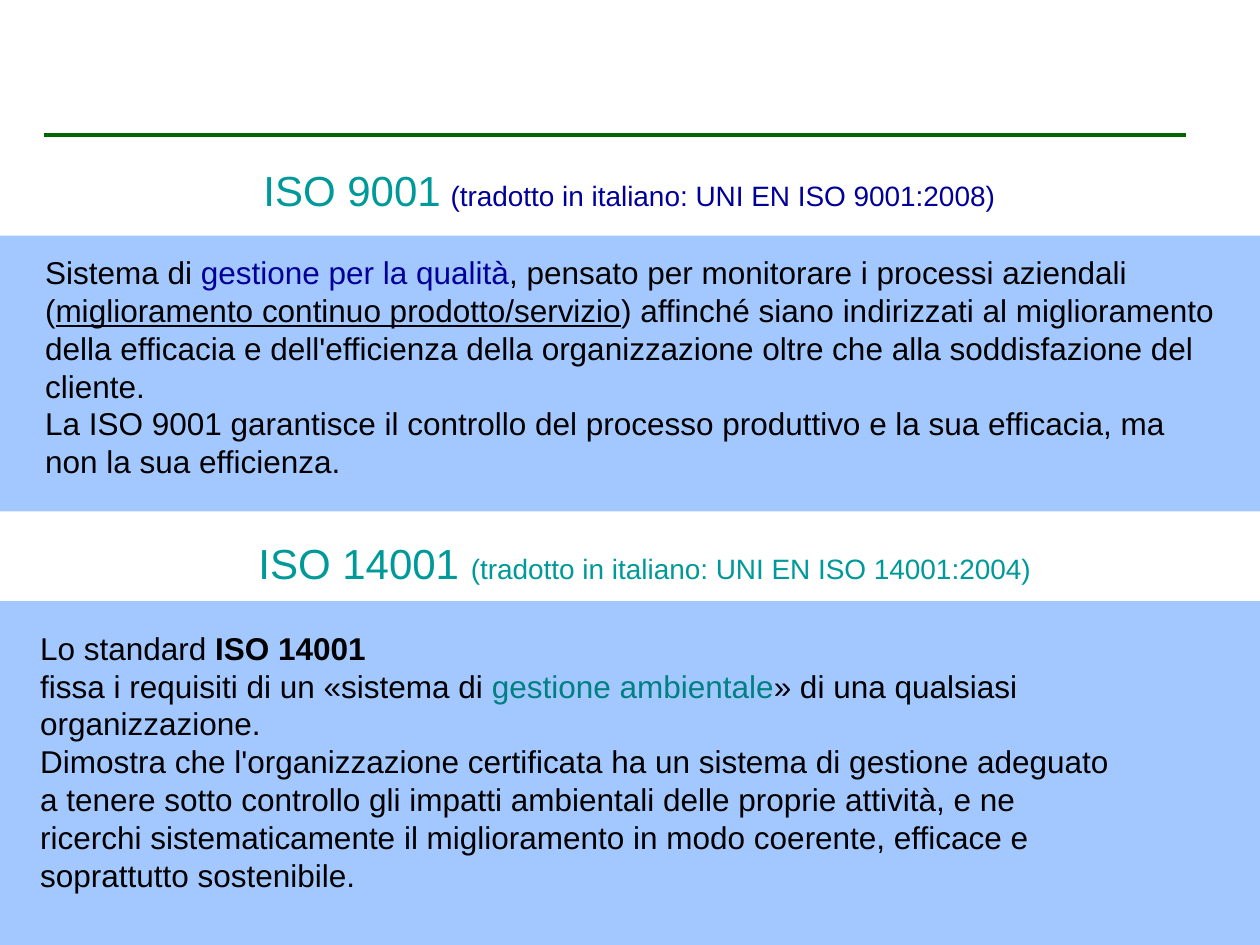
from dataclasses import dataclass

from lxml import etree
from pptx import Presentation
from pptx.dml.color import RGBColor
from pptx.enum.shapes import MSO_CONNECTOR, MSO_SHAPE
from pptx.enum.text import PP_ALIGN
from pptx.oxml.ns import qn
from pptx.util import Cm, Pt

LINE, RECT = MSO_CONNECTOR.STRAIGHT, MSO_SHAPE.RECTANGLE
LEFT, MID = PP_ALIGN.LEFT, PP_ALIGN.CENTER
WIDE, HIGH = 25.4, 19.05
BLACK, NAVY, AQUA, TEAL = "000000", "000099", "009999", "008080"
GREEN, BLUE = "006600", "0066FF"


@dataclass
class Run:
    text: str
    size: int = 18
    color: str = BLACK
    bold: bool = False
    under: bool = False


@dataclass
class Box:
    left: float
    top: float
    width: float
    height: float


def paint(form, code: str) -> None:
    form.rgb = RGBColor.from_string(code)


def add_band(slide, box: Box, alpha: int = 36) -> None:
    band = slide.shapes.add_shape(
        RECT, Cm(box.left), Cm(box.top), Cm(box.width), Cm(box.height))
    band.shadow.inherit = False
    band.line.fill.background()
    band.fill.solid()
    paint(band.fill.fore_color, BLUE)
    tint = band.fill._xPr.find(qn("a:solidFill"))[0]
    etree.SubElement(tint, qn("a:alpha"), val=str(alpha * 1000))


def add_rule(slide, left: float, top: float, right: float) -> None:
    rule = slide.shapes.add_connector(LINE, Cm(left), Cm(top), Cm(right), Cm(top))
    rule.line.width = Pt(2)
    paint(rule.line.color, GREEN)
    etree.SubElement(rule._element.spPr, qn("a:effectLst"))


def add_text(slide, box: Box, paras: list[list[Run]], *,
             align=LEFT, inset: float = 0.25) -> None:
    shape = slide.shapes.add_textbox(
        Cm(box.left), Cm(box.top), Cm(box.width), Cm(box.height))
    frame = shape.text_frame
    frame.word_wrap = True
    frame.margin_left = Cm(inset)
    for i, runs in enumerate(paras):
        para = frame.paragraphs[0] if i == 0 else frame.add_paragraph()
        para.alignment = align
        for item in runs:
            run = para.add_run()
            run.text = item.text
            font = run.font
            font.name, font.size = "Arial", Pt(item.size)
            font.bold, font.underline = item.bold, item.under
            paint(font.color, item.color)


def main() -> None:
    deck = Presentation()
    deck.slide_width, deck.slide_height = Cm(WIDE), Cm(HIGH)
    slide = deck.slides.add_slide(deck.slide_layouts[6])

    # Rule and bands
    add_rule(slide, 0.89, 2.72, 23.9)
    for top, height in ((4.75, 5.56), (12.12, HIGH - 12.12)):
        add_band(slide, Box(0, top, WIDE, height))

    # Quality standard
    add_text(slide, Box(2.44, 3.2, 20.5, 1.96), [[
        Run("ISO 9001", 24, AQUA),
        Run(" ", 20),
        Run("(tradotto in italiano: UNI EN ISO 9001:2008)", 16, NAVY),
    ]], align=MID)
    add_text(slide, Box(0.66, 4.98, 24.08, 5.74), [
        [Run("Sistema di "),
         Run("gestione per la qualità", color=NAVY),
         Run(", pensato per monitorare i processi aziendali ("),
         Run("miglioramento continuo prodotto/servizio", under=True),
         Run(") affinché siano indirizzati al miglioramento della efficacia "
             "e dell'efficienza della organizzazione oltre che alla "
             "soddisfazione del cliente.")],
        [Run("La ISO 9001 garantisce il controllo del processo produttivo "
             "e la sua efficacia, ma non la sua efficienza.")],
    ])

    # Environment standard
    add_text(slide, Box(3, 10.72, 19.41, 1.3), [[
        Run("ISO 14001 ", 24, AQUA),
        Run("(tradotto in italiano: UNI EN ISO 14001:2004)", 16, AQUA),
    ]], align=MID, inset=0.84)
    add_text(slide, Box(0.56, 12.55, 24.31, 6.5), [
        [Run("Lo standard "), Run("ISO 14001", bold=True)],
        [Run("fissa i requisiti di un «sistema di "),
         Run("gestione ambientale", color=TEAL),
         Run("» di una qualsiasi organizzazione.")],
        [Run("Dimostra che l'organizzazione certificata ha un sistema di "
             "gestione adeguato")],
        [Run("a tenere sotto controllo gli impatti ambientali delle proprie "
             "attività, e ne")],
        [Run("ricerchi sistematicamente il miglioramento in modo coerente, "
             "efficace e")],
        [Run("soprattutto sostenibile.")],
    ])

    deck.save("out.pptx")


if __name__ == "__main__":
    main()
